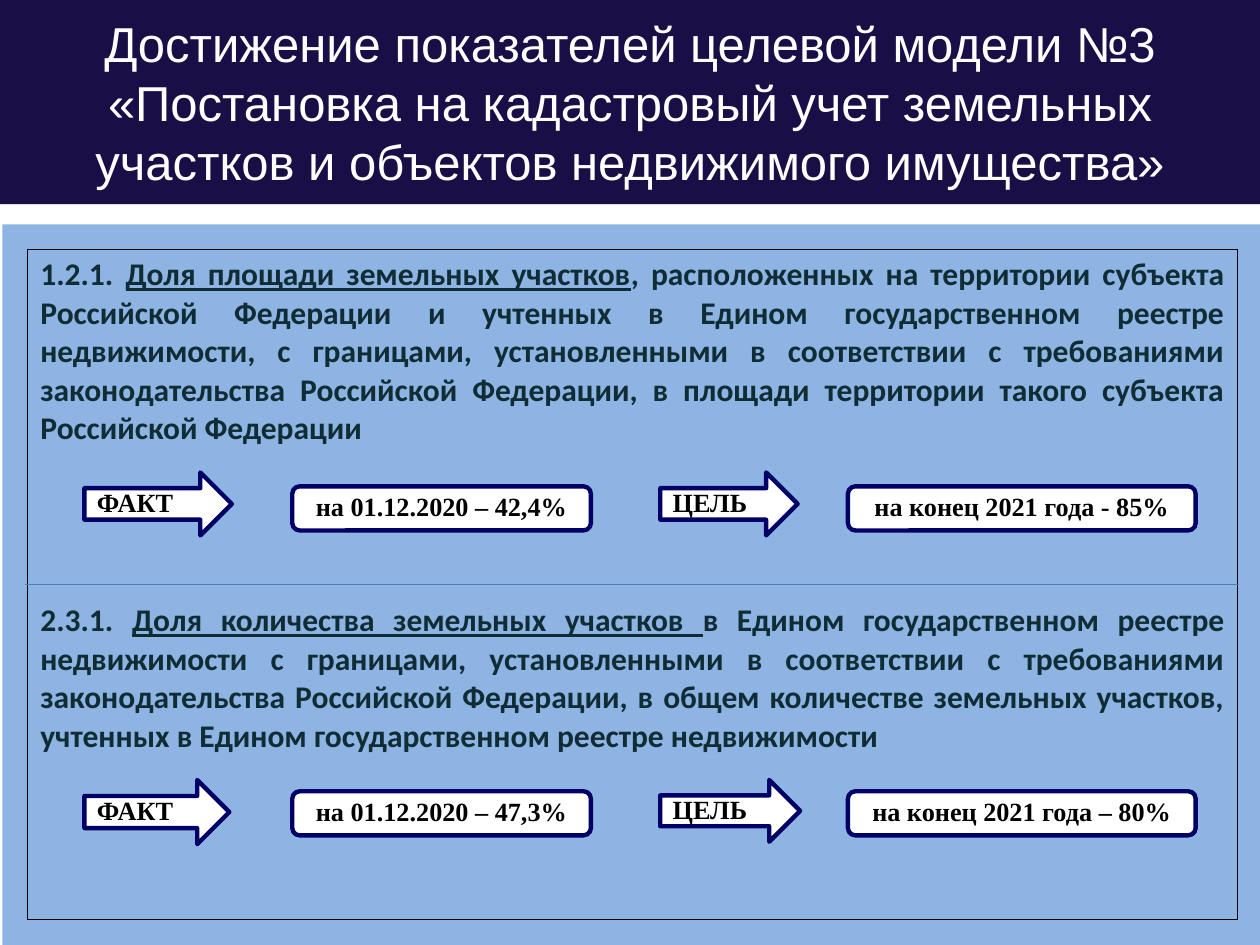
from dataclasses import dataclass
from lxml.etree import SubElement
from pptx import Presentation
from pptx.dml.color import RGBColor
from pptx.enum.shapes import MSO_CONNECTOR, MSO_SHAPE
from pptx.enum.text import MSO_ANCHOR, PP_ALIGN
from pptx.oxml.ns import qn
from pptx.util import Inches, Pt


@dataclass(frozen=True)
class Theme:
    banner: str = "1A0E46"
    panel: str = "8EB4E3"
    body: str = "102C34"
    divider: str = "4B7EBC"
    outline: str = "000066"
    white: str = "FFFFFF"
    black: str = "000000"
    title_size: float = 28
    body_size: float = 18
    label_size: float = 15
    title_font: str = "Arial"
    body_font: str = "Calibri"
    label_font: str = "Times New Roman"


THEME = Theme()

INDICATORS = [
    (
        "1.2.1. ",
        "Доля площади земельных участков",
        ", расположенных на территории субъекта Российской Федерации и учтенных "
        "в Едином государственном реестре недвижимости, с границами, "
        "установленными в соответствии с требованиями законодательства "
        "Российской Федерации, в площади территории такого субъекта "
        "Российской Федерации",
    ),
    (
        "2.3.1. ",
        "Доля количества земельных участков ",
        "в Едином государственном реестре недвижимости с границами, "
        "установленными в соответствии с требованиями законодательства "
        "Российской Федерации, в общем количестве земельных участков, "
        "учтенных в Едином государственном реестре недвижимости",
    ),
]


def add_text(paragraph, text, *, font, size, color, bold=False, underline=False,
             align=PP_ALIGN.LEFT, spacing=None):
    paragraph.alignment = align
    if spacing:
        paragraph.line_spacing = spacing
    run = paragraph.add_run()
    run.text = text
    run.font.name = font
    run.font.size = Pt(size)
    run.font.bold = bold
    run.font.underline = underline
    run.font.color.rgb = RGBColor.from_string(color)


def add_block(slide, preset, box, fill, outline=None):
    block = slide.shapes.add_shape(preset, *map(Inches, box))
    block.shadow.inherit = False
    block.fill.solid()
    block.fill.fore_color.rgb = RGBColor.from_string(fill)
    if outline:
        block.line.color.rgb = RGBColor.from_string(outline)
        block.line.width = Pt(2.5)
    else:
        block.line.fill.background()
    return block


def add_banner(slide, box, text):
    banner = add_block(slide, MSO_SHAPE.RECTANGLE, box, THEME.banner)
    frame = banner.text_frame
    frame.word_wrap = True
    frame.vertical_anchor = MSO_ANCHOR.MIDDLE
    add_text(frame.paragraphs[0], text, font=THEME.title_font,
             size=THEME.title_size, color=THEME.white, align=PP_ALIGN.CENTER)


def add_cell_borders(cell, color, width):
    properties = cell._tc.get_or_add_tcPr()
    for position, side in enumerate(("a:lnL", "a:lnR", "a:lnT", "a:lnB")):
        border = SubElement(properties, qn(side), w=str(Pt(width)))
        fill = SubElement(border, qn("a:solidFill"))
        SubElement(fill, qn("a:srgbClr"), val=color)
        properties.insert(position, border)


def add_indicators(slide, box, indicators):
    table = slide.shapes.add_table(1, 1, *map(Inches, box)).table
    table.first_row = False
    table.horz_banding = False
    cell = table.cell(0, 0)
    cell.fill.background()
    add_cell_borders(cell, THEME.black, 1)
    frame = cell.text_frame
    for index, (number, subject, details) in enumerate(indicators):
        paragraph = frame.add_paragraph() if index else frame.paragraphs[0]
        if index:
            paragraph.space_before = Pt(88)
        for text, underline in ((number, False), (subject, True), (details, False)):
            add_text(paragraph, text, font=THEME.body_font, size=THEME.body_size,
                     color=THEME.body, bold=True, underline=underline,
                     align=PP_ALIGN.JUSTIFY)


def add_divider(slide, left, right, top):
    divider = slide.shapes.add_connector(
        MSO_CONNECTOR.STRAIGHT, Inches(left), Inches(top), Inches(right), Inches(top))
    divider.line.color.rgb = RGBColor.from_string(THEME.divider)
    divider.line.width = Pt(0.75)
    SubElement(divider._element.spPr, qn("a:effectLst"))


def add_label(slide, preset, box, text, align, wrap):
    label = add_block(slide, preset, box, THEME.white, THEME.outline)
    frame = label.text_frame
    frame.word_wrap = wrap
    frame.vertical_anchor = MSO_ANCHOR.MIDDLE
    add_text(frame.paragraphs[0], text, font=THEME.label_font,
             size=THEME.label_size, color=THEME.black, bold=True,
             align=align, spacing=0.87)


def add_result_row(slide, arrow_top, value_top, arrows, values):
    for left, (text, width, height) in zip((0.67, 5.24), arrows):
        add_label(slide, MSO_SHAPE.RIGHT_ARROW, (left, arrow_top, width, height),
                  text, PP_ALIGN.LEFT, False)
    for (left, width), text in zip(((2.32, 2.37), (6.73, 2.76)), values):
        add_label(slide, MSO_SHAPE.ROUNDED_RECTANGLE, (left, value_top, width, 0.35),
                  text, PP_ALIGN.CENTER, True)


def main():
    presentation = Presentation()
    presentation.slide_width = Inches(10)
    presentation.slide_height = Inches(7.5)
    slide = presentation.slides.add_slide(presentation.slide_layouts[6])
    add_banner(slide, (0, 0, 10, 1.62),
               "Достижение показателей целевой модели №3 «Постановка на кадастровый "
               "учет земельных участков и объектов недвижимого имущества»")
    add_block(slide, MSO_SHAPE.RECTANGLE, (0.02, 1.78, 10, 5.72), THEME.panel)
    add_indicators(slide, (0.22, 1.98, 9.6, 5.32), INDICATORS)
    add_divider(slide, 0.2, 9.83, 4.64)
    add_result_row(slide, 3.75, 3.86,
                   (("ФАКТ", 1.17, 0.5), ("ЦЕЛЬ", 1.09, 0.5)),
                   ("на 01.12.2020 – 42,4%", "на конец 2021 года - 85%"))
    add_result_row(slide, 6.19, 6.28,
                   (("ФАКТ", 1.15, 0.51), ("ЦЕЛЬ", 1.11, 0.49)),
                   ("на 01.12.2020 – 47,3%", "на конец 2021 года – 80%"))
    presentation.save("out.pptx")


if __name__ == "__main__":
    main()
